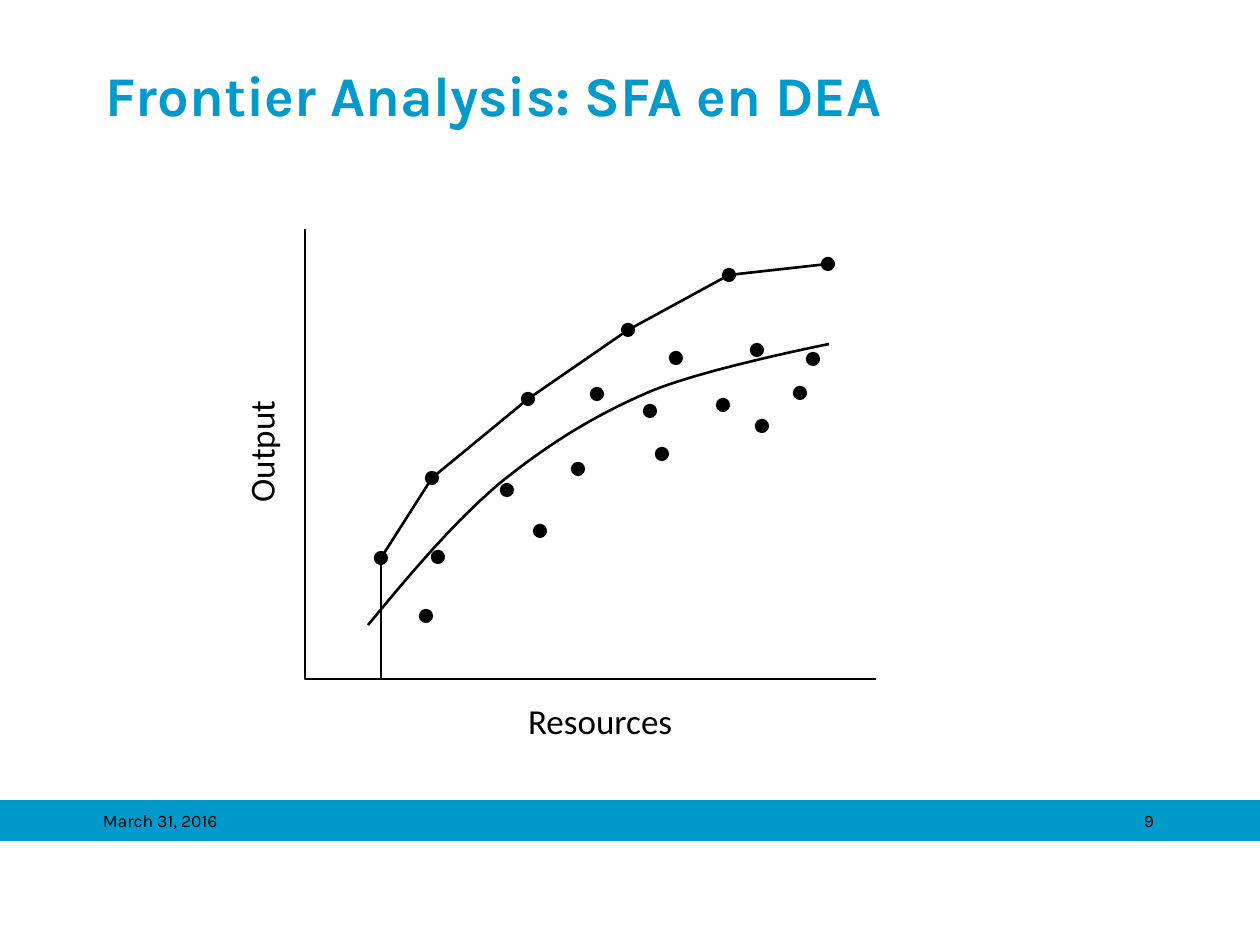
import pptx
import pptx.dml.color
import pptx.enum.shapes
import pptx.enum.text
import pptx.oxml.ns
import pptx.util
from lxml import etree

BLUE = pptx.dml.color.RGBColor(0x00, 0x99, 0xCC)
BLACK = pptx.dml.color.RGBColor(0x00, 0x00, 0x00)
ALIGN = pptx.enum.text.PP_ALIGN
SHAPE = pptx.enum.shapes.MSO_SHAPE
PX_PER_INCH = 126

AXES = [(305, 229), (305, 679), (876, 679)]
FRONTIER = [(381, 558), (432, 478), (528, 399), (628, 330), (729, 275), (828, 264)]
BELOW_FRONTIER = [
    (426, 616), (438, 557), (507, 490), (540, 531), (578, 469), (597, 394), (650, 411),
    (662, 454), (676, 358), (723, 405), (757, 350), (762, 426), (800, 393), (813, 359),
]
# Start point, then two control points and an end point for each curve segment.
REGRESSION = [
    (368, 625),
    (411, 573), (454, 522), (500, 483),
    (547, 445), (593, 416), (649, 392),
    (703, 369), (829, 344), (829, 344),
]


def px(*lengths):
    return [pptx.util.Emu(round(length * 914400 / PX_PER_INCH)) for length in lengths]


class SlideBuilder:
    heading_font = "Karla"
    chart_font = "Calibri"
    dot_size = 13
    line_width = 1.5

    def __init__(self, slide):
        self.slide = slide
        self.shapes = slide.shapes

    def fill_text(self, box, text, size, font, color=BLACK, bold=False,
                  align=ALIGN.LEFT, insets=(0, 6, 0, 6), wrap=True):
        """Fill a shape with one run; insets are left, top, right, bottom."""
        frame = box.text_frame
        frame.word_wrap = wrap
        frame.auto_size = pptx.enum.text.MSO_AUTO_SIZE.NONE
        frame.vertical_anchor = pptx.enum.text.MSO_ANCHOR.TOP
        (frame.margin_left, frame.margin_top,
         frame.margin_right, frame.margin_bottom) = px(*insets)
        para = frame.paragraphs[0]
        para.alignment = align
        span = para.add_run()
        span.text = text
        span.font.name = font
        span.font.size = pptx.util.Pt(size)
        span.font.bold = bold
        span.font.color.rgb = color

    def title(self, text, left, top, width, height):
        box = self.shapes.title
        box.left, box.top, box.width, box.height = px(left, top, width, height)
        self.fill_text(box, text, 32, self.heading_font, BLUE, bold=True, insets=(0, 11, 0, 6))

    def text(self, text, left, top, width, height, size, font, rotation=0, **style):
        box = self.shapes.add_textbox(*px(left, top, width, height))
        box.rotation = rotation
        self.fill_text(box, text, size, font, **style)

    def preset(self, kind, left, top, width, height, color, line_width):
        shape = self.shapes.add_shape(kind, *px(left, top, width, height))
        shape.shadow.inherit = False
        shape.fill.solid()
        shape.fill.fore_color.rgb = color
        shape.line.color.rgb = color
        shape.line.width = pptx.util.Pt(line_width)

    def dot(self, x, y):
        corner = self.dot_size / 2
        self.preset(SHAPE.OVAL, x - corner, y - corner, self.dot_size, self.dot_size, BLACK, 0)

    def line(self, start, end):
        connector = self.shapes.add_connector(
            pptx.enum.shapes.MSO_CONNECTOR.STRAIGHT, *px(*start, *end))
        connector.line.color.rgb = BLACK
        connector.line.width = pptx.util.Pt(self.line_width)
        properties = connector._element.spPr
        etree.SubElement(properties, pptx.oxml.ns.qn("a:effectLst"))

    def outline(self, points, line_width):
        corners = [px(*point) for point in points]
        builder = self.shapes.build_freeform(*corners[0])
        builder.add_line_segments(corners[1:], close=False)
        shape = builder.convert_to_shape()
        shape.shadow.inherit = False
        shape.fill.background()
        shape.line.color.rgb = BLACK
        shape.line.width = pptx.util.Pt(line_width)
        return shape

    def curve(self, points):
        """Draw an outline and merge each three straight segments into one cubic."""
        shape = self.outline(points, self.line_width)
        segments = list(shape._element.iter(pptx.oxml.ns.qn("a:lnTo")))
        for first in range(0, len(segments), 3):
            cubic = etree.Element(pptx.oxml.ns.qn("a:cubicBezTo"))
            segments[first].addprevious(cubic)
            for segment in segments[first:first + 3]:
                cubic.append(segment[0])
                segment.getparent().remove(segment)


def main():
    deck = pptx.Presentation()
    deck.slide_width, deck.slide_height = px(1260, 945)
    page = SlideBuilder(deck.slides.add_slide(deck.slide_layouts[5]))

    page.preset(SHAPE.RECTANGLE, 0, 801, 1260, 39, BLUE, 0.75)
    page.title("Frontier Analysis: SFA en DEA", 105, 49, 1071, 158)
    page.text("March 31, 2016", 103, 804, 262, 42, 10, page.heading_font)
    page.text("9", 892, 804, 262, 32, 10, page.heading_font, align=ALIGN.RIGHT)

    page.outline(AXES, 0)
    page.text("Resources", 528, 699, 146, 43, 20, page.chart_font,
              insets=(0, 0, 0, 0), wrap=False)
    page.text("Output", 165, 392, 192, 55, 20, page.chart_font,
              rotation=270, insets=(13, 6, 13, 6))

    page.curve(REGRESSION)
    page.line((FRONTIER[0][0], AXES[1][1]), FRONTIER[0])
    for start, end in zip(FRONTIER, FRONTIER[1:]):
        page.line(start, end)
    for center in FRONTIER + BELOW_FRONTIER:
        page.dot(*center)

    deck.save("out.pptx")


if __name__ == "__main__":
    main()
